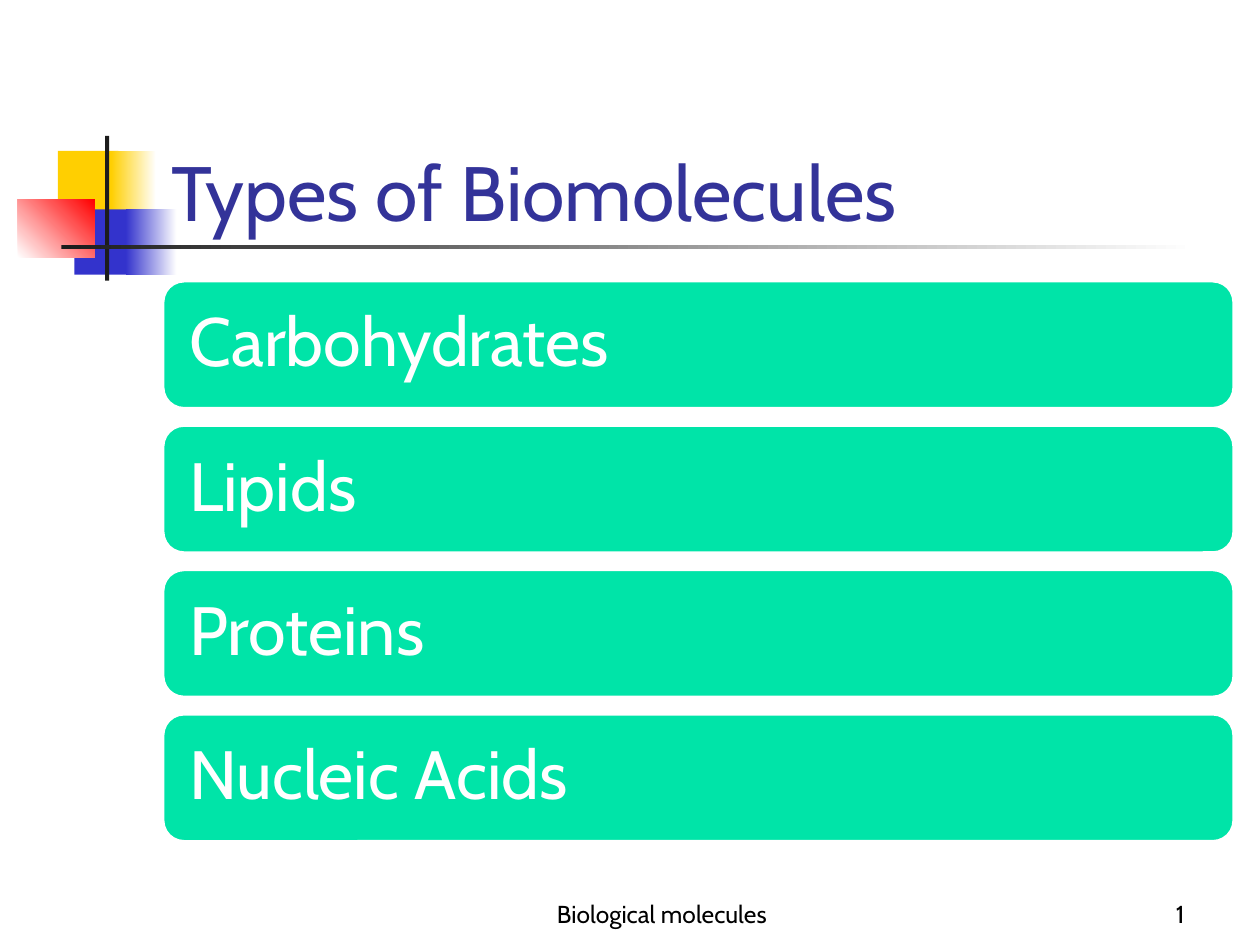
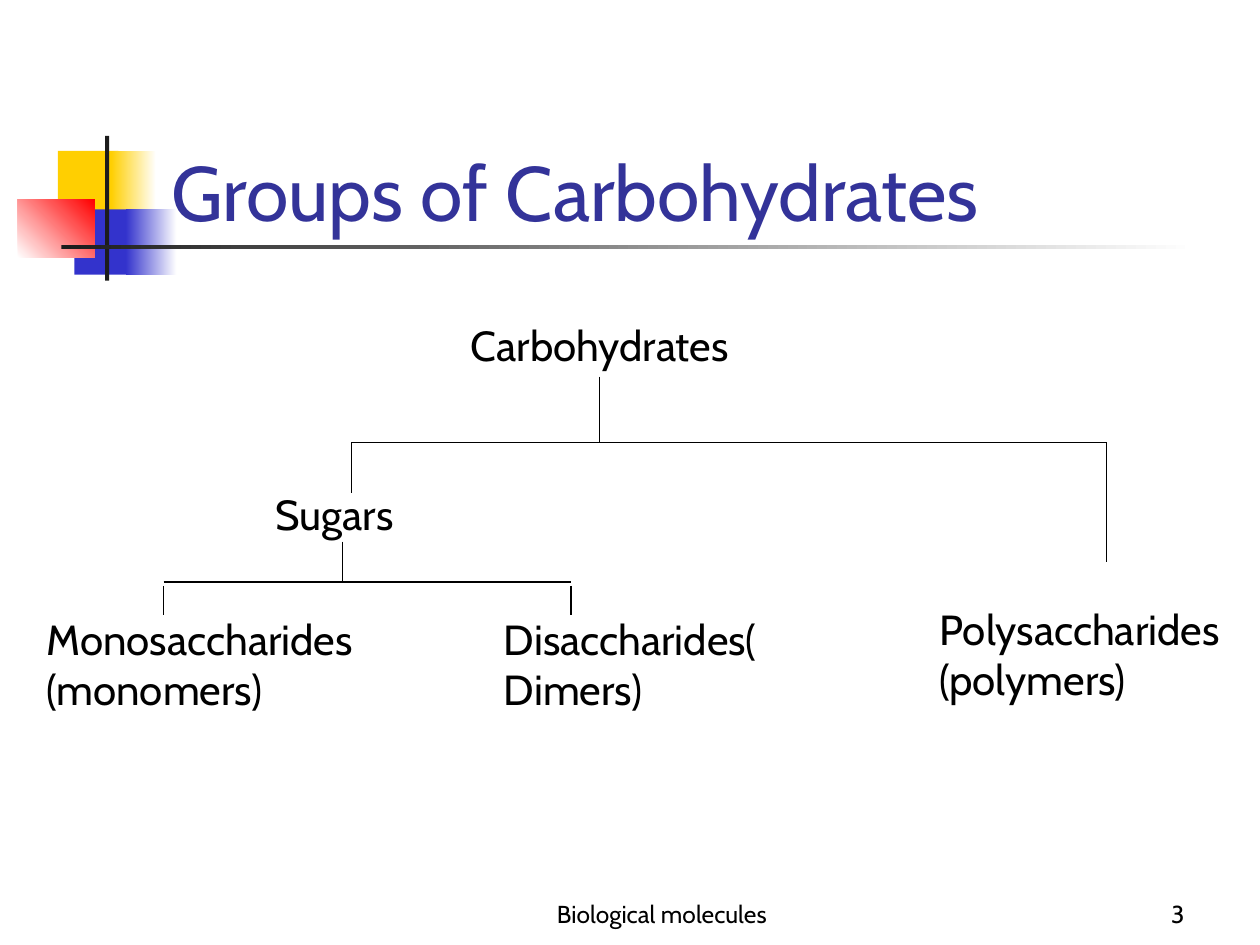
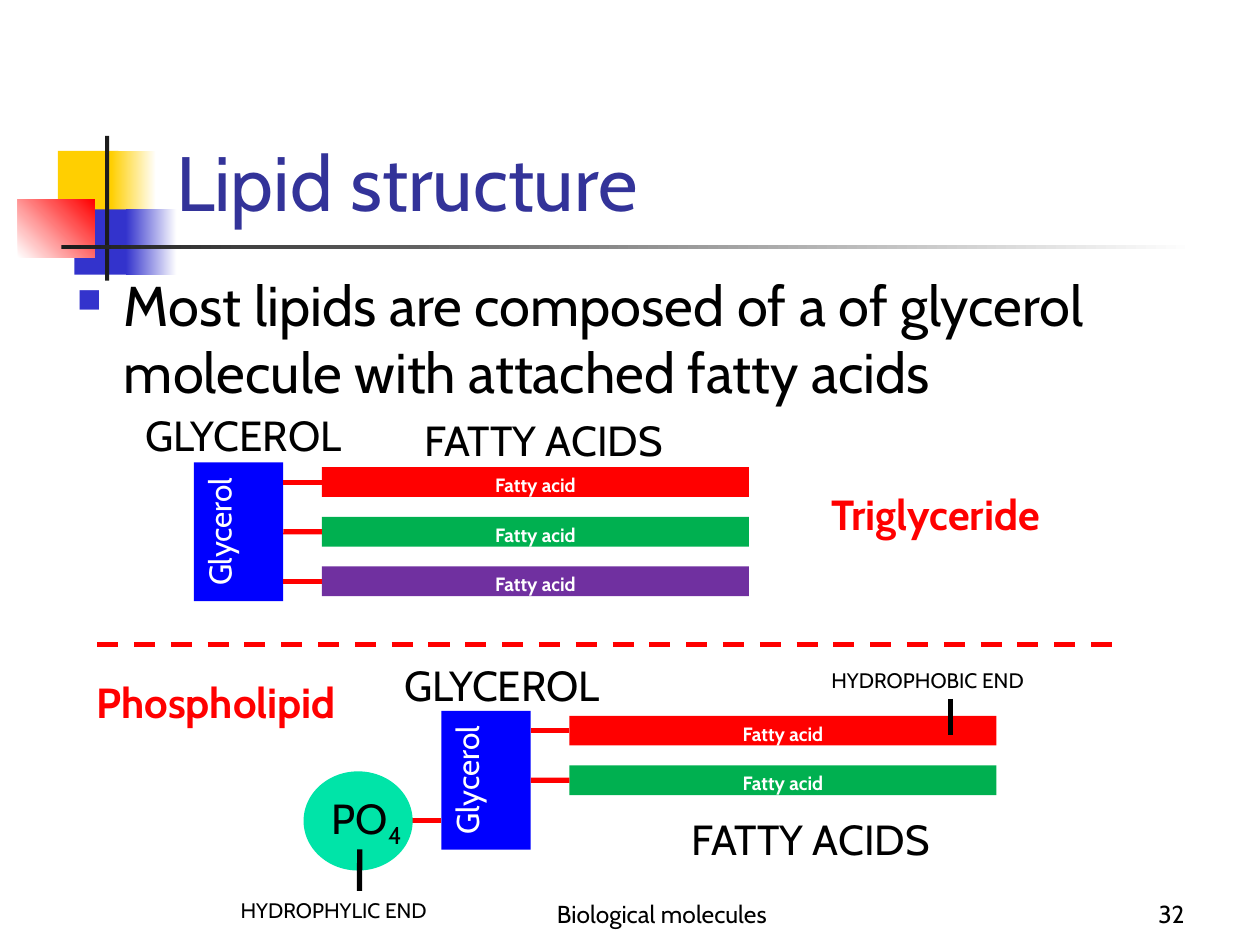
from lxml.etree import SubElement
from pptx import Presentation
from pptx.dml.color import RGBColor
from pptx.enum.dml import MSO_LINE
from pptx.enum.shapes import MSO_CONNECTOR, MSO_SHAPE
from pptx.enum.text import MSO_ANCHOR, PP_ALIGN
from pptx.oxml.ns import qn
from pptx.util import Cm, Pt

FONT = "Cabin"
BLACK = RGBColor(0x00, 0x00, 0x00)
WHITE = RGBColor(0xFF, 0xFF, 0xFF)
INK = RGBColor(0x1C, 0x1C, 0x1C)
YELLOW = RGBColor(0xFF, 0xCF, 0x01)
INDIGO = RGBColor(0x33, 0x33, 0xCC)
TITLE_BLUE = RGBColor(0x33, 0x33, 0x99)
RED = RGBColor(0xFF, 0x00, 0x00)
MINT = RGBColor(0x00, 0xE4, 0xA8)
BLUE = RGBColor(0x00, 0x00, 0xFF)
GREEN = RGBColor(0x00, 0xB0, 0x50)
PURPLE = RGBColor(0x70, 0x30, 0xA0)

TOP, LEFT, BOTTOM, RIGHT = range(4)  # connection sites of a rectangle
FOOTER = "Biological molecules"


# Basic parts, all lengths in centimetres

def write(tf, text, size, color=BLACK, bold=False, align=PP_ALIGN.LEFT,
          anchor=MSO_ANCHOR.TOP, wrap=True):
    tf.word_wrap = wrap
    tf.vertical_anchor = anchor
    p = tf.paragraphs[0]
    p.alignment = align
    r = p.add_run()
    r.text = text
    for name, value in {"name": FONT, "size": Pt(size), "bold": bold}.items():
        setattr(r.font, name, value)
    r.font.color.rgb = color
    return p


def add_text(s, box, text, size, **style):
    sp = s.shapes.add_textbox(*map(Cm, box))
    write(sp.text_frame, text, size, **style)
    return sp


def add_block(s, box, color, kind=MSO_SHAPE.RECTANGLE):
    sp = s.shapes.add_shape(kind, *map(Cm, box))
    sp.shadow.inherit = False
    sp.line.fill.background()
    sp.fill.solid()
    sp.fill.fore_color.rgb = color
    return sp


def add_fade(s, box, start, end, angle=0):
    sp = add_block(s, box, start)
    sp.fill.gradient()
    sp.fill.gradient_angle = angle
    for stop, color in zip(sp.fill.gradient_stops, (start, end)):
        stop.color.rgb = color


def add_line(s, x1, y1, x2, y2, color=BLACK, width=0.75):
    line = s.shapes.add_connector(MSO_CONNECTOR.STRAIGHT, *map(Cm, (x1, y1, x2, y2)))
    line.line.color.rgb = color
    line.line.width = Pt(width)
    SubElement(line._element.spPr, qn("a:effectLst"))
    return line


# Shared slide frame

def add_emblem(s, x, y):
    add_block(s, (x + 0.81, y + 0.3, 1.22, 1.32), YELLOW)
    add_fade(s, (x + 1.88, y + 0.3, 0.91, 1.32), YELLOW, WHITE)
    add_block(s, (x + 1.14, y + 1.48, 1.17, 1.32), INDIGO)
    add_fade(s, (x + 2.18, y + 1.48, 1.02, 1.32), INDIGO, WHITE)
    add_fade(s, (x, y + 1.28, 1.55, 1.17), WHITE, RED, angle=45)
    add_block(s, (x + 1.76, y, 0.08, 2.92), INK)
    add_fade(s, (x + 0.88, y + 2.2, 22.86, 0.09), INK, WHITE)


def add_footer(s, x, y, number):
    for dx, w, text, align in ((0, 8.05, FOOTER, PP_ALIGN.CENTER),
                               (9.53, 5.28, number, PP_ALIGN.RIGHT)):
        add_text(s, (x + dx, y, w, 1.27), text, 14, align=align, anchor=MSO_ANCHOR.BOTTOM)


def add_frame(prs, title, number, title_at=(3.2, 1.73)):
    s = prs.slides.add_slide(prs.slide_layouts[6])
    add_emblem(s, 0.36, 2.74)
    add_text(s, (*title_at, 21.64, 3.18), title, 44, color=TITLE_BLUE,
             anchor=MSO_ANCHOR.BOTTOM)
    add_footer(s, 9.32, 17.58, number)
    return s


# Slide 1: stacked list of molecule types

def add_type_list(s, x, y, w, names):
    height, pitch = 2.58, 2.91
    for i, name in enumerate(names):
        sp = add_block(s, (x, y + i * pitch, w, height), MINT, MSO_SHAPE.ROUNDED_RECTANGLE)
        sp.line.color.rgb = WHITE
        sp.line.width = Pt(2)
        tf = sp.text_frame
        for side in ("left", "right", "top", "bottom"):
            setattr(tf, f"margin_{side}", Cm(0.41))
        p = write(tf, name, 39, color=WHITE, anchor=MSO_ANCHOR.MIDDLE)
        p.line_spacing = 0.9


# Slide 2: classification tree

def add_bracket(s, stem_x, top, bus_y, drops, gap=0):
    """Stem down to a horizontal bus, with drops given as {x: bottom}."""
    stem = add_line(s, stem_x, top, stem_x, bus_y)
    add_line(s, min(drops), bus_y, max(drops), bus_y)
    for x, bottom in drops.items():
        add_line(s, x, bus_y + gap, x, bottom)
    return stem


def add_carbohydrate_tree(s, x, y):
    root = add_text(s, (x + 7.4, y, 8, 1.27), "Carbohydrates", 24, align=PP_ALIGN.CENTER)
    for dx, dy, w, h, text in (
        (4.61, 3.41, 6.4, 1.27, "Sugars"),
        (0, 5.92, 7.39, 2.29, "Monosaccharides (monomers)"),
        (9.22, 5.92, 5.79, 2.29, "Disaccharides( Dimers)"),
        (18, 5.72, 7.01, 2.29, "Polysaccharides (polymers)"),
    ):
        add_text(s, (x + dx, y + dy, w, h), text, 24)
    stem = add_bracket(s, x + 11.4, y + 1.27, y + 2.6,
                       {x + 6.4: y + 3.61, x + 21.61: y + 5.01})
    stem.begin_connect(root, BOTTOM)
    add_bracket(s, x + 6.22, y + 4.6, y + 5.41,
                {x + 2.61: y + 6.08, x + 10.82: y + 6.08}, gap=0.08)


# Slide 3: lipid diagrams

def add_bullet(s, box, text):
    sp = add_text(s, box, text, 32)
    pPr = sp.text_frame.paragraphs[0]._p.get_or_add_pPr()
    pPr.set("marL", str(Cm(0.95)))
    pPr.set("indent", str(-Cm(0.95)))
    color = SubElement(pPr, qn("a:buClr"))
    SubElement(color, qn("a:srgbClr"), val=str(INDIGO))
    SubElement(pPr, qn("a:buSzPct"), val="60000")
    SubElement(pPr, qn("a:buChar"), char="■")


def add_lipid(s, x, y, acid_colors):
    """Glycerol block at x, y with one bar per fatty acid."""
    w, h, bar_x, bar_h = 1.8, 2.8, 2.58, 0.6
    glycerol = add_block(s, (x, y, w, h), BLUE)
    write(glycerol.text_frame, "Glycerol", 18, color=WHITE, align=PP_ALIGN.CENTER, wrap=False)
    glycerol.text_frame._txBody.bodyPr.set("vert", "vert270")
    for i, color in enumerate(acid_colors):
        bar_y = y + 0.1 + i
        mid = bar_y + bar_h / 2
        bar = add_block(s, (x + bar_x, bar_y, 8.61, bar_h), color)
        write(bar.text_frame, "Fatty acid", 11, color=WHITE, bold=True,
              align=PP_ALIGN.CENTER, wrap=False)
        link = add_line(s, x + w, mid, x + bar_x, mid, RED, 3)
        link.end_connect(bar, LEFT)
        if i == 1:  # the second bar is level with the middle of the block
            link.begin_connect(glycerol, RIGHT)


def add_phosphate(s, x, y):
    add_line(s, x + 1.98, y + 0.99, x + 2.78, y + 0.99, RED, 3)
    sp = add_block(s, (x, y, 2.2, 2), MINT, MSO_SHAPE.OVAL)
    p = write(sp.text_frame, "PO", 24, wrap=False)
    r = p.add_run()
    r.text = "4"
    for name, value in {"name": FONT, "size": Pt(24)}.items():
        setattr(r.font, name, value)
    r.font.color.rgb = BLACK
    r._r.get_or_add_rPr().set("baseline", "-25000")


def add_end_label(s, x, y, text, site):
    """Label whose pointer leaves from its top or bottom side."""
    w, h, reach = 5.3, 0.76, 0.84
    label = add_text(s, (x, y, w, h), text, 12)
    start, end = (y, y - reach) if site == TOP else (y + h, y + reach + 0.64)
    pointer = add_line(s, x + w / 2, start, x + w / 2, end, BLACK, 3)
    pointer.begin_connect(label, site)


def add_lipid_diagrams(s, x, y):
    # Names of the two lipids and the divider between them
    for dx, dy, text in ((14.81, 1.6, "Triglyceride"), (0, 5.38, "Phospholipid")):
        add_text(s, (x + dx, y + dy, 6.2, 1.27), text, 24, color=RED, bold=True)
    divider = add_line(s, x + 0.26, y + 4.86, x + 21.01, y + 4.86, RED, 3)
    divider.line.dash_style = MSO_LINE.DASH

    # Molecules
    add_lipid(s, x + 2.21, y + 1.19, (RED, GREEN, PURPLE))
    add_lipid(s, x + 7.2, y + 6.2, (RED, GREEN))
    add_phosphate(s, x + 4.42, y + 7.42)

    # Captions
    for dx, dy, text in ((0.99, 0, "GLYCEROL"), (6.61, 0.1, "FATTY ACIDS"),
                         (6.2, 5.05, "GLYCEROL"), (11.99, 8.15, "FATTY ACIDS")):
        add_text(s, (x + dx, y + dy, 5.9, 1.3), text, 24)
    add_end_label(s, x + 2.9, y + 9.83, "HYDROPHYLIC END", TOP)
    add_end_label(s, x + 14.81, y + 5.2, "HYDROPHOBIC END", BOTTOM)


def main():
    prs = Presentation()
    prs.slide_width, prs.slide_height = Cm(25.4), Cm(19.05)

    s = add_frame(prs, "Types of Biomolecules", "1")
    add_type_list(s, 3.28, 5.66, 21.6,
                  ("Carbohydrates", "Lipids", "Proteins", "Nucleic Acids"))

    s = add_frame(prs, "Groups of Carbohydrates", "3")
    add_carbohydrate_tree(s, 0.69, 6.32)

    s = add_frame(prs, "Lipid structure", "32", title_at=(3.3, 1.52))
    add_bullet(s, (1.3, 5.33, 23.27, 3),
               "Most lipids are composed of a of glycerol molecule with attached fatty acids")
    add_lipid_diagrams(s, 1.7, 8.13)

    prs.save("out.pptx")


if __name__ == "__main__":
    main()
